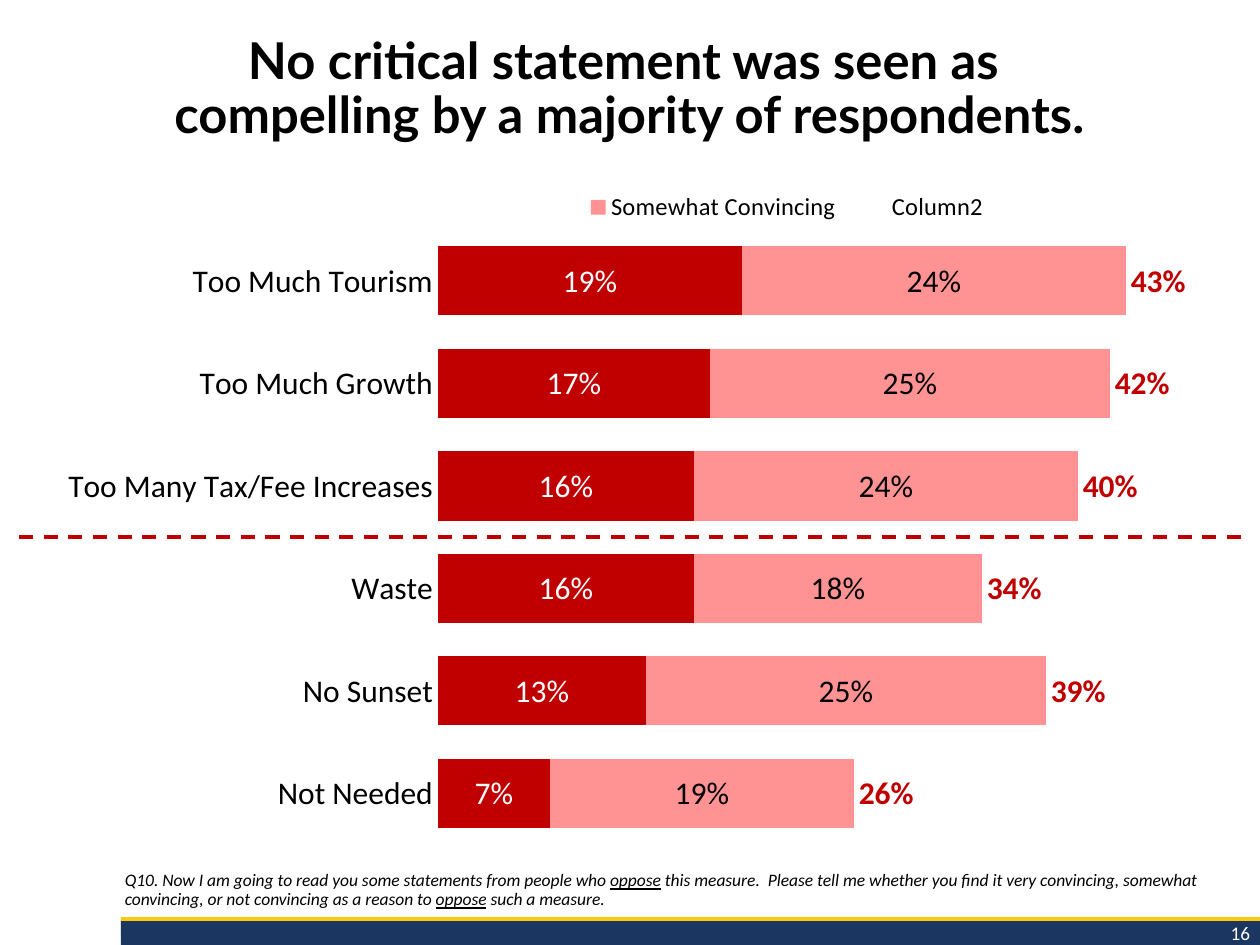
from lxml import etree
from pptx import Presentation
from pptx.chart.data import CategoryChartData
from pptx.dml.color import RGBColor
from pptx.enum.chart import XL_CHART_TYPE, XL_LABEL_POSITION, XL_LEGEND_POSITION, XL_TICK_MARK
from pptx.enum.dml import MSO_LINE
from pptx.enum.shapes import MSO_CONNECTOR, MSO_SHAPE
from pptx.enum.text import MSO_ANCHOR, MSO_AUTO_SIZE, PP_ALIGN
from pptx.oxml import parse_xml
from pptx.oxml.ns import nsdecls, qn
from pptx.util import Inches, Pt

BAR_STACKED = XL_CHART_TYPE.BAR_STACKED
CENTER, INSIDE_BASE = XL_LABEL_POSITION.CENTER, XL_LABEL_POSITION.INSIDE_BASE
LEGEND_TOP, NO_TICK = XL_LEGEND_POSITION.TOP, XL_TICK_MARK.NONE

# Content
COLORS = {"black": "000000", "white": "FFFFFF", "red": "C00000", "pink": "FF9393",
          "gold": "FCCA09", "navy": "1B3661"}
TITLE = "No critical statement was seen as \vcompelling by a majority of respondents."
QUESTION = [  # text, underlined
    ("Q10. Now I am going to read you some statements from people who ", False),
    ("oppose", True),
    (" this measure.  Please tell me whether you find it very convincing, "
     "somewhat convincing, or not convincing as a reason to ", False),
    ("oppose", True),
    (" such a measure.", False),
]
PAGE_NUMBER = "16"
STATEMENTS = [  # name, very convincing, somewhat convincing, total
    ("Too Much Tourism", 0.19, 0.24, 0.43),
    ("Too Much Growth", 0.17, 0.25, 0.42),
    ("Too Many Tax/Fee Increases", 0.16, 0.24, 0.40),
    ("Waste", 0.16, 0.18, 0.34),
    ("No Sunset", 0.13, 0.25, 0.39),
    ("Not Needed", 0.07, 0.19, 0.26),
]
SERIES = [  # name, fill, label color, label position, bold label
    ("Very Convincing", "red", "white", CENTER, False),
    ("Somewhat Convincing", "pink", "black", CENTER, False),
    ("Column2", None, "red", INSIDE_BASE, True),
]
FOOTER_BARS = [("gold", 7.28, 0.16), ("navy", 7.31, 0.19)]  # color, top, height
PLOT_AREA = (0.327, 0.086, 0.66, 0.852)
LEGEND_AREA = (0.43, 0.025, 0.37, 0.06)


def rgb(name):
    return RGBColor.from_string(COLORS[name])


def set_font(font, size, color="black", name="Calibri", **formats):
    font.color.rgb = rgb(color)
    for key, value in {"size": Pt(size), "name": name, **formats}.items():
        setattr(font, key, value)


def place(shape, *box):
    for key, value in zip(("left", "top", "width", "height"), box):
        setattr(shape, key, Inches(value))


def manual_layout(area, inner=False):
    target = '<c:layoutTarget val="inner"/>' if inner else ""
    modes = "".join(f'<c:{axis}Mode val="edge"/>' for axis in "xy")
    sizes = "".join(f'<c:{key} val="{value}"/>' for key, value in zip("xywh", area))
    return parse_xml(f'<c:layout {nsdecls("c")}><c:manualLayout>{target}{modes}{sizes}'
                     "</c:manualLayout></c:layout>")


def replace_layout(parent, layout, position):
    for old in parent.findall(qn("c:layout")):
        parent.remove(old)
    parent.insert(position, layout)


presentation = Presentation()
presentation.slide_width, presentation.slide_height = Inches(10), Inches(7.5)
slide = presentation.slides.add_slide(presentation.slide_layouts[1])

# Footer bars and page number
for color, top, height in FOOTER_BARS:
    bar = slide.shapes.add_shape(MSO_SHAPE.RECTANGLE, Inches(0.96), Inches(top),
                                 Inches(9.04), Inches(height))
    bar.shadow.inherit = False
    bar.fill.solid()
    bar.fill.fore_color.rgb = rgb(color)
    bar.line.fill.background()
number_box = slide.shapes.add_textbox(Inches(8.54), Inches(7.26), Inches(1.48), Inches(0.29))
number_box.text_frame.word_wrap = True
paragraph = number_box.text_frame.paragraphs[0]
paragraph.text = PAGE_NUMBER
paragraph.alignment = PP_ALIGN.RIGHT
set_font(paragraph.font, 11, "white")

# Title
title = slide.shapes.title
place(title, 0, 0.23, 10, 1.22)
title.text_frame.auto_size = MSO_AUTO_SIZE.NONE
title.text_frame.vertical_anchor = MSO_ANCHOR.TOP
paragraph = title.text_frame.paragraphs[0]
paragraph.text = TITLE
paragraph.alignment = PP_ALIGN.CENTER
paragraph.line_spacing = 0.9
set_font(paragraph.font, 29, name="Lato", bold=True)

# Question wording
question = slide.placeholders[1]
place(question, 0.89, 6.73, 9.09, 0.54)
question.text_frame.auto_size = MSO_AUTO_SIZE.NONE
question.text_frame.vertical_anchor = MSO_ANCHOR.BOTTOM
paragraph = question.text_frame.paragraphs[0]
paragraph.line_spacing = 0.9
paragraph.space_before = Pt(0)
properties = paragraph._p.get_or_add_pPr()
properties.set("marL", "0")
properties.set("indent", "0")
etree.SubElement(properties, qn("a:buNone"))
for text, underlined in QUESTION:
    run = paragraph.add_run()
    run.text = text
    set_font(run.font, 10, italic=True, underline=underlined)

# Chart
names, *columns = zip(*STATEMENTS)
chart_data = CategoryChartData(number_format="0%")
chart_data.categories = names
for (name, *_), values in zip(SERIES, columns):
    chart_data.add_series(name, values)
chart = slide.shapes.add_chart(BAR_STACKED, Inches(0.33), Inches(1.33), Inches(9.62),
                               Inches(5.73), chart_data).chart
set_font(chart.font, 18)
chart.has_title = False
plot = chart.plots[0]
plot.gap_width, plot.overlap = 48, 100
plot.vary_by_categories = False

for series, (_, fill, label_color, position, bold) in zip(plot.series, SERIES):
    if fill:
        series.format.fill.solid()
        series.format.fill.fore_color.rgb = rgb(fill)
    else:
        series.format.fill.background()
    labels = series.data_labels
    for key, value in {"show_value": True, "position": position, "number_format": "0%",
                       "number_format_is_linked": False}.items():
        setattr(labels, key, value)
    set_font(labels.font, 18, label_color, bold=bold)

category_axis, value_axis = chart.category_axis, chart.value_axis
category_axis.reverse_order = True
category_axis.major_tick_mark = NO_TICK
category_axis.format.line.fill.background()
set_font(category_axis.tick_labels.font, 18)
for key, value in {"minimum_scale": 0, "maximum_scale": 0.5, "major_unit": 0.1,
                   "has_major_gridlines": False, "visible": False}.items():
    setattr(value_axis, key, value)
value_axis.tick_labels.number_format = "0%"

# Legend and plot positions, with one legend entry hidden
chart.has_legend = True
legend = chart.legend
legend.position = LEGEND_TOP
legend.include_in_layout = False
set_font(legend.font, 14)
replace_layout(legend._element, manual_layout(LEGEND_AREA), 1)
legend._element.insert(1, parse_xml(
    f'<c:legendEntry {nsdecls("c")}><c:idx val="2"/><c:delete val="1"/></c:legendEntry>'))
replace_layout(chart._chartSpace.chart.plotArea, manual_layout(PLOT_AREA, inner=True), 0)

# Dashed divider below the top three statements
divider = slide.shapes.add_connector(MSO_CONNECTOR.STRAIGHT, Inches(0.15), Inches(4.26),
                                     Inches(9.87), Inches(4.26))
divider.line.color.rgb = rgb("red")
divider.line.width = Pt(2)
divider.line.dash_style = MSO_LINE.DASH
etree.SubElement(divider._element.spPr, qn("a:effectLst"))

presentation.save("out.pptx")
